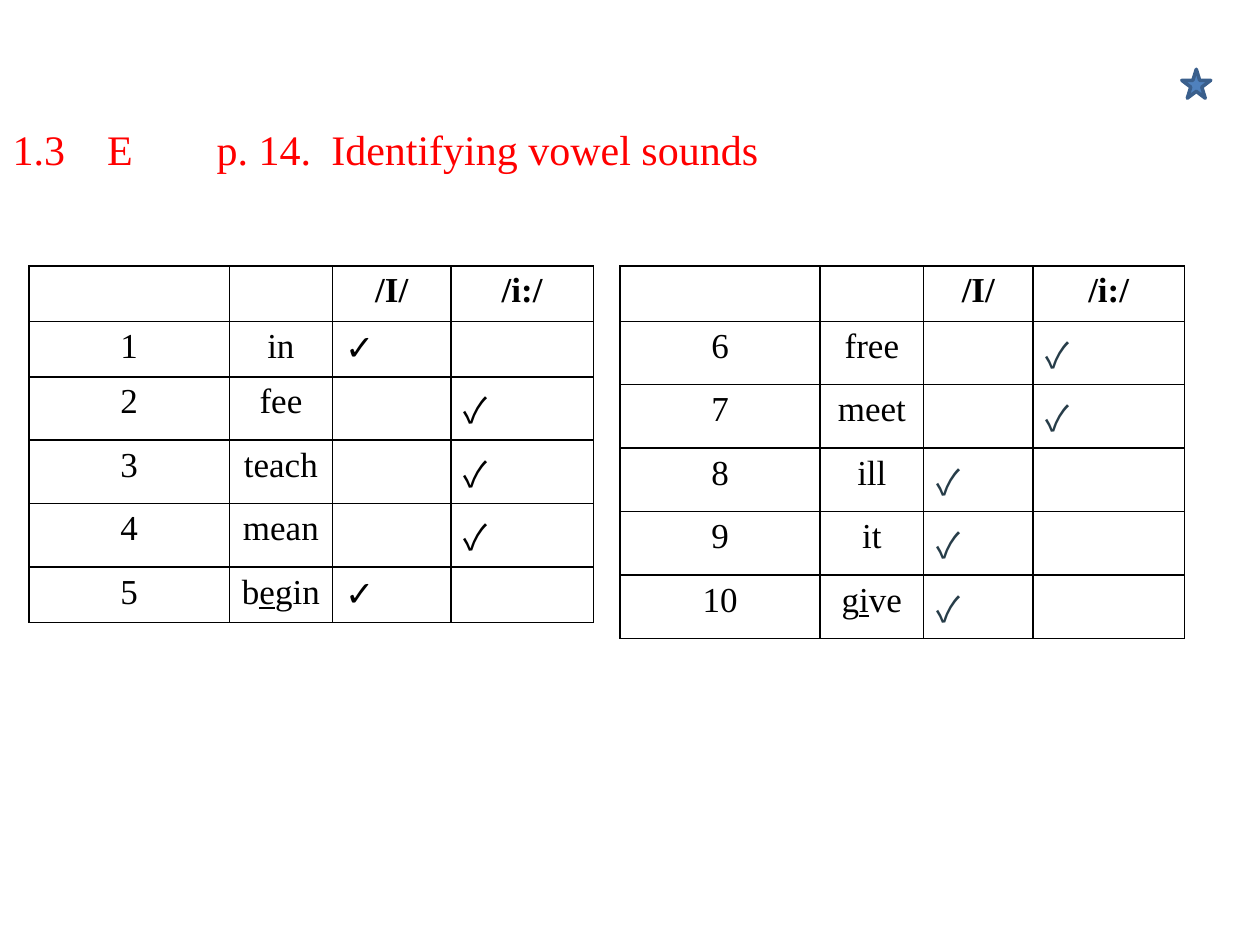
from typing import NamedTuple

from pptx import Presentation
from pptx.dml.color import RGBColor
from pptx.enum.shapes import MSO_SHAPE
from pptx.enum.text import MSO_ANCHOR, MSO_AUTO_SIZE, PP_ALIGN
from pptx.oxml import parse_xml
from pptx.oxml.ns import nsdecls, qn
from pptx.util import Inches, Pt

SERIF = "Times New Roman"
SANS = "Calibri"
CJK = "Noto Sans CJK JP"
BLACK, WHITE, RED = "000000", "FFFFFF", "FF0000"
SHORT, LONG = 2, 3  # tick columns
ROW = 0.44
TOP = 2.11


class Word(NamedTuple):
    text: str  # underscores enclose the underlined letter
    sound: int


class Grid(NamedTuple):
    left: float
    cols: tuple[float, ...]
    first: int
    short_font: str
    tick: str
    words: tuple[Word, ...]


GRIDS = (
    Grid(0.23, (1.59, 0.82, 0.94, 1.13), 1, SANS, BLACK, (
        Word("in", SHORT), Word("fee", LONG), Word("teach", LONG),
        Word("mean", LONG), Word("b_e_gin", SHORT))),
    Grid(4.92, (1.59, 0.82, 0.87, 1.2), 6, CJK, "273D49", (
        Word("free", LONG), Word("meet", LONG), Word("ill", SHORT),
        Word("it", SHORT), Word("g_i_ve", SHORT))),
)


def rgb(code: str) -> RGBColor:
    return RGBColor.from_string(code)


def style(font, name: str, size: float, color: str, bold: bool = False) -> None:
    font.name, font.size, font.bold = name, Pt(size), bold
    font.color.rgb = rgb(color)


def frame(cell) -> None:
    """Fill the cell white and rule all four sides."""
    props = cell._tc.get_or_add_tcPr()
    for side in ("lnL", "lnR", "lnT", "lnB"):
        props.append(parse_xml(
            f'<a:{side} {nsdecls("a")} w="12700"><a:solidFill>'
            f'<a:srgbClr val="{BLACK}"/></a:solidFill></a:{side}>'))
    cell.fill.solid()
    cell.fill.fore_color.rgb = rgb(WHITE)


def label(cell, text: str, bold: bool = False) -> None:
    cell.margin_left = cell.margin_right = Inches(0.07)
    cell.margin_top = cell.margin_bottom = 0
    para = cell.text_frame.paragraphs[0]
    para.alignment, para.line_spacing = PP_ALIGN.CENTER, 1.15
    for i, part in enumerate(text.split("_")):
        run = para.add_run()
        run.text = part
        style(run.font, SERIF, 20, BLACK, bold)
        if i % 2:
            run.font.underline = True


def check(cell, name: str, color: str) -> None:
    run = cell.text_frame.paragraphs[0].add_run()
    run.text = "✓"
    style(run.font, name, 20, color)
    east = run._r.get_or_add_rPr().makeelement(qn("a:ea"), {"typeface": name})
    run._r.rPr.find(qn("a:latin")).addnext(east)


def draw(slide, grid: Grid) -> None:
    rows = len(grid.words) + 1
    table = slide.shapes.add_table(
        rows, len(grid.cols), Inches(grid.left), Inches(TOP),
        Inches(sum(grid.cols)), Inches(ROW * rows)).table
    table.first_row = table.horz_banding = False
    for col, width in zip(table.columns, grid.cols):
        col.width = Inches(width)
    for cell in table.iter_cells():
        frame(cell)
    label(table.cell(0, SHORT), "/I/", True)
    label(table.cell(0, LONG), "/i:/", True)
    for row, word in enumerate(grid.words, 1):
        label(table.cell(row, 0), str(grid.first + row - 1))
        label(table.cell(row, 1), word.text)
        name = grid.short_font if word.sound == SHORT else CJK
        check(table.cell(row, word.sound), name, grid.tick)


def head(slide, width: int, height: int) -> None:
    title = slide.shapes.title
    title.left, title.top, title.width, title.height = 0, 0, width, height
    box = title.text_frame
    box.auto_size, box.word_wrap = MSO_AUTO_SIZE.NONE, True
    box.vertical_anchor, box.margin_top = MSO_ANCHOR.TOP, Inches(0.98)
    box.text = "1.3\tE\tp. 14.\tIdentifying vowel sounds"
    para = box.paragraphs[0]
    para.alignment = PP_ALIGN.LEFT
    stops = "".join(f'<a:tab pos="{Inches(at)}" algn="l"/>'
                    for at in (0.75, 1.62, 2.53))
    para._p.get_or_add_pPr().append(
        parse_xml(f'<a:tabLst {nsdecls("a")}>{stops}</a:tabLst>'))
    style(para.font, SERIF, 24, RED)


def star(slide) -> None:
    shape = slide.shapes.add_shape(
        MSO_SHAPE.STAR_5_POINT, Inches(9.38), Inches(0.55),
        Inches(0.23), Inches(0.23))
    shape.shadow.inherit = False
    shape.fill.solid()
    shape.fill.fore_color.rgb = rgb("4F81BD")
    shape.line.color.rgb = rgb("3A5F8C")
    shape.line.width = Pt(2)


def main() -> None:
    deck = Presentation()
    deck.slide_width, deck.slide_height = Inches(10), Inches(7.5)
    slide = deck.slides.add_slide(deck.slide_layouts[5])
    # Title
    head(slide, deck.slide_width, deck.slide_height)
    # Word tables
    for grid in GRIDS:
        draw(slide, grid)
    # Corner star
    star(slide)
    deck.save("out.pptx")


if __name__ == "__main__":
    main()
